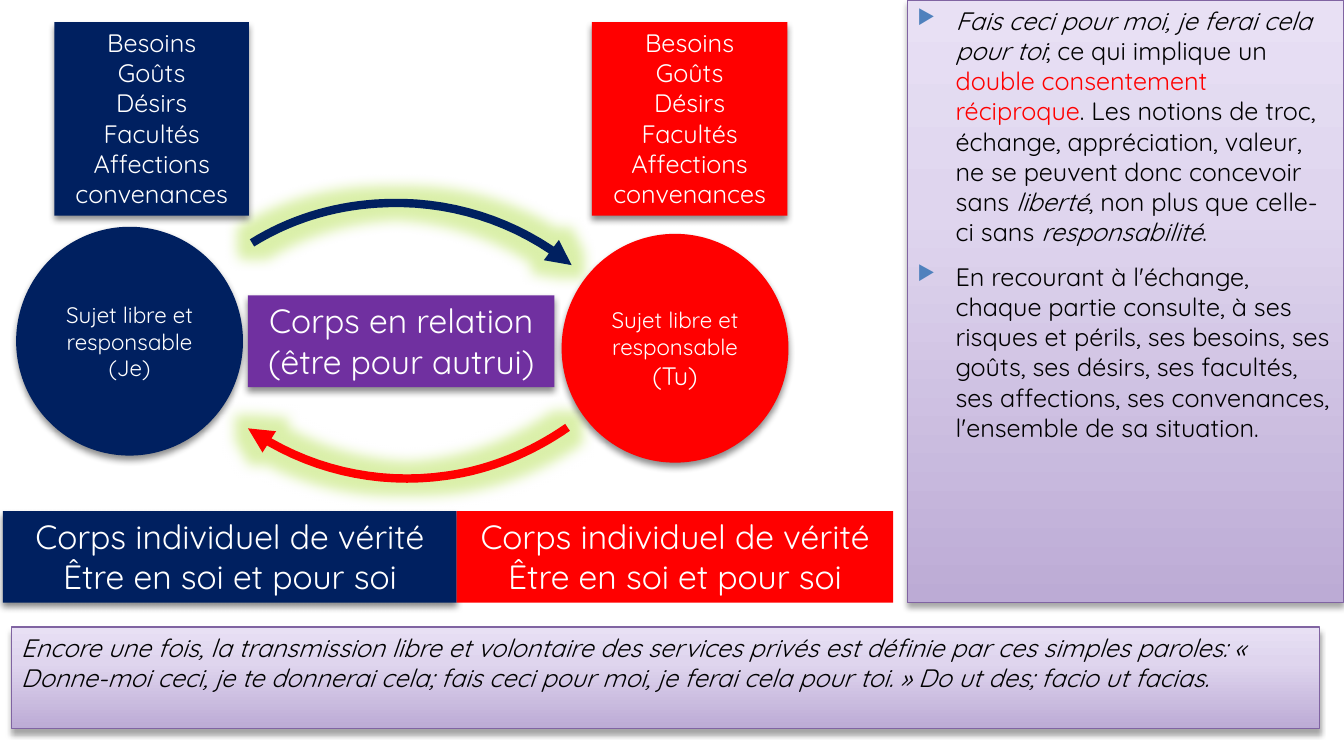
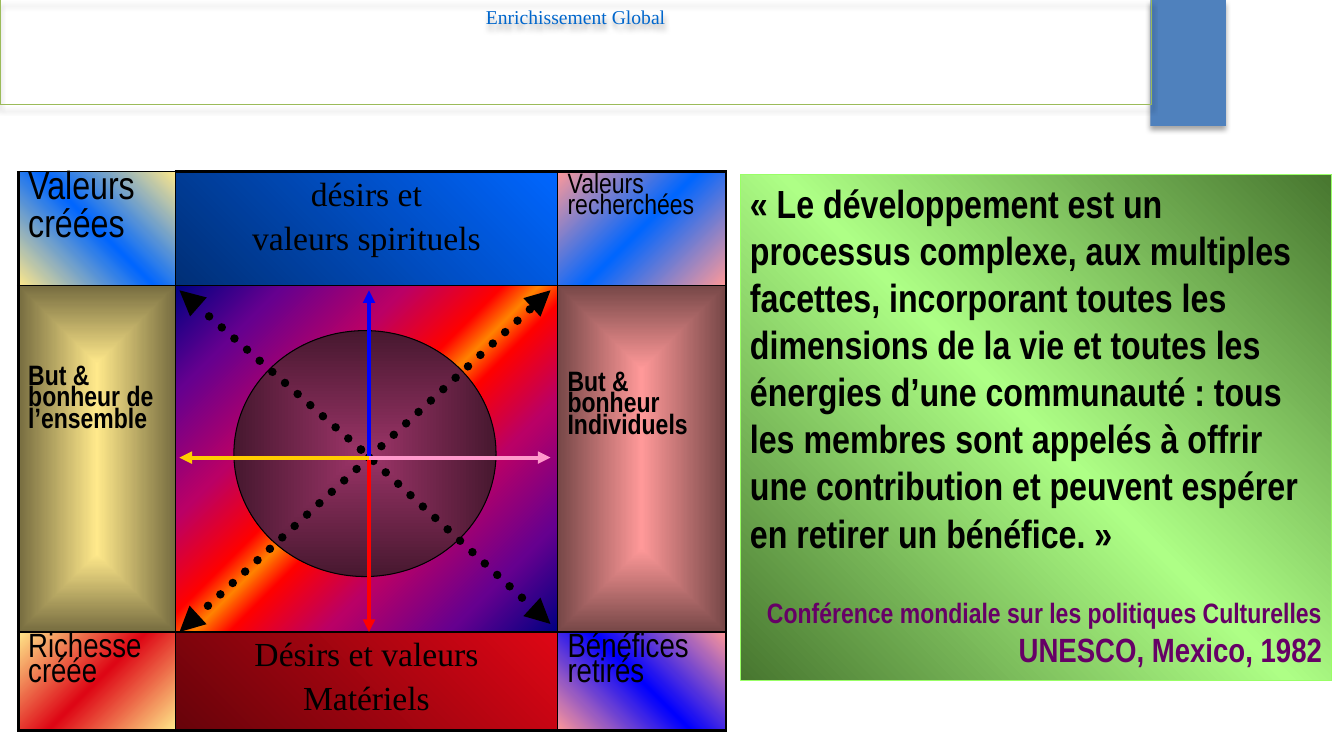
from lxml import etree
from pptx import Presentation
from pptx.dml.color import RGBColor
from pptx.enum.dml import MSO_LINE
from pptx.enum.shapes import MSO_CONNECTOR, MSO_SHAPE
from pptx.enum.text import MSO_ANCHOR, PP_ALIGN
from pptx.oxml.ns import qn
from pptx.util import Inches, Pt

RECT, OVAL = MSO_SHAPE.RECTANGLE, MSO_SHAPE.OVAL
LEFT, MID, RIGHT = PP_ALIGN.LEFT, PP_ALIGN.CENTER, PP_ALIGN.RIGHT
TOP, CENTER = MSO_ANCHOR.TOP, MSO_ANCHOR.MIDDLE
DOTS = MSO_LINE.ROUND_DOT
STRAIGHT = MSO_CONNECTOR.STRAIGHT

# Shared style
NAVY, RED, VIOLET, BLUE = "002060", "FF0000", "7030A0", "4F81BD"
BLACK, WHITE, PLUM = "000000", "FFFFFF", "660066"
SANS, NARROW, SERIF = "Quicksand", "Arial Narrow", "Times New Roman"
SOFT, DEEP = (35, 4, 3), (45, 5, 3)  # shadow: opacity %, blur pt, offset pt
LILAC = ([(0, "BCABD5"), (65, "DFD5EE"), (100, "E8E0F4")], 270)

# Slide 1 content
NEEDS = ["Besoins", "Goûts", "Désirs", "Facultés", "Affections", "convenances"]
SELF = ["Corps individuel de vérité", "Être en soi et pour soi"]
BOND = ["Corps en relation", "(être pour autrui)"]
FREE = "Sujet libre et responsable"
BLOCKS = [  # shape, place, fill, lines, size, shadow
    (OVAL, (0.16, 2.25, 2.25, 2.27), NAVY, [FREE, "(Je)"], 16, DEEP),
    (OVAL, (5.57, 2.32, 2.25, 2.27), RED, [FREE, "(Tu)"], 16, DEEP),
    (RECT, (0.03, 5.07, 4.5, 0.91), NAVY, SELF, 24, DEEP),
    (RECT, (4.53, 5.07, 4.33, 0.91), RED, SELF, 24, None),
    (RECT, (0.54, 0.22, 1.93, 1.92), NAVY, NEEDS, 18, DEEP),
    (RECT, (5.87, 0.22, 1.94, 1.92), RED, NEEDS, 18, DEEP),
    (RECT, (2.46, 2.93, 3.04, 0.91), VIOLET, BOND, 24, DEEP),
]
ARCS = [  # colour, start, then two Bézier pieces
    (NAVY, (2.5, 2.41), [((2.87, 2.18), (3.29, 2.05), (3.73, 2.02)),
                         ((4.44, 1.97), (5.13, 2.19), (5.67, 2.63))]),
    (RED, (5.63, 4.24), [((5.27, 4.49), (4.86, 4.66), (4.43, 4.72)),
                         ((3.73, 4.82), (3.03, 4.65), (2.46, 4.25))]),
]
POINTS = [  # runs: text, italic, colour
    [("Fais ceci pour moi, je ferai cela pour toi", True, BLACK),
     ("; ce qui implique un ", False, BLACK),
     ("double consentement réciproque", False, RED),
     (". Les notions de troc, échange, appréciation, valeur, ne se peuvent "
      "donc concevoir sans ", False, BLACK),
     ("liberté", True, BLACK),
     (", non plus que celle-ci sans ", False, BLACK),
     ("responsabilité", True, BLACK),
     (".", False, BLACK)],
    "En recourant à l'échange, chaque partie consulte, à ses risques et "
    "périls, ses besoins, ses goûts, ses désirs, ses facultés, ses "
    "affections, ses convenances, l'ensemble de sa situation.",
]
MAXIM = ("Encore une fois, la transmission libre et volontaire des services "
         "privés est définie par ces simples paroles: « Donne-moi ceci, je te "
         "donnerai cela; fais ceci pour moi, je ferai cela pour toi. » Do ut "
         "des; facio ut facias.")

# Slide 2 content
TITLE = "Enrichissement Global"
GOLD, PINK, SKY, CRIMSON = "FFE98B", "FF9999", "0066FF", "DE0615"
GLOW = [(0, "000082"), (15, "66008F"), (32, "BA0066"), (45, "FF0000"),
        (50, "FF8200"), (55, "FF0000"), (68, "BA0066"), (85, "66008F"),
        (100, "000082")]


def band(edge, core):
    return [(0, edge), (50, core), (100, edge)]


COLS, ROWS = [1.56, 3.79, 1.67], [1.13, 3.44, 0.98]
CELLS = [  # lines, size, top margin, gradient stops, angle (None: from centre)
    [(["Valeurs", "créées"], 28, 0.05, band(GOLD, SKY), 315),
     (["désirs et", "valeurs spirituels"], 24, 0.05,
      [(0, "002F76"), (100, SKY)], 315),
     (["Valeurs recherchées"], 20, 0.05, band(PINK, SKY), 45)],
    [(["But & bonheur de l’ensemble"], 20, 0.83,
      [(0, GOLD), (100, "766C40")], None),
     ([], 20, 0.05, GLOW, 45),
     (["But & bonheur Individuels"], 20, 0.89,
      [(0, PINK), (100, "764747")], None)],
    [(["Richesse créée"], 24, 0.05, band(GOLD, CRIMSON), 45),
     (["Désirs et valeurs", "Matériels"], 24, 0.05,
      [(0, "67030A"), (100, CRIMSON)], 315),
     (["Bénéfices retirés"], 24, 0.05, band(PINK, "0000FF"), 315)],
]
HUB, NEAR = (3.66, 4.54), (3.58, 4.46)
ARROWS = [  # start, end, colour, width, dotted
    (HUB, (5.46, 2.88), BLACK, 6, True),
    (HUB, (1.78, 6.27), BLACK, 6, True),
    (NEAR, (5.46, 6.19), BLACK, 6, True),
    (NEAR, (1.78, 2.88), BLACK, 6, True),
    (HUB, (3.66, 2.88), "0000FF", 3, False),
    (HUB, (3.66, 6.27), RED, 3, False),
    (HUB, (1.78, 4.54), "FFCC00", 3, False),
    (HUB, (5.46, 4.54), "FF99CC", 3, False),
]
QUOTE = ("« Le développement est un processus complexe, aux multiples "
         "facettes, incorporant toutes les dimensions de la vie et toutes les "
         "énergies d’une communauté : tous les membres sont appelés à offrir "
         "une contribution et peuvent espérer en retirer un bénéfice. »")
SOURCE = ["Conférence mondiale sur les politiques Culturelles",
          "UNESCO, Mexico, 1982"]


def rgb(code):
    return RGBColor.from_string(code)


def sub(node, tag, **attrs):
    child = etree.SubElement(node, qn("a:" + tag))
    for key, val in attrs.items():
        child.set(key, str(val))
    return child


def tint(node, code, alpha=100):
    clr = sub(node, "srgbClr", val=code)
    if alpha < 100:
        sub(clr, "alpha", val=alpha * 1000)


def shade(fill, node, stops, angle):
    """Gradient along an angle, or out from the centre if angle is None."""
    fill.gradient()
    grad = node.find(".//" + qn("a:gradFill"))
    grad.clear()
    stack = sub(grad, "gsLst")
    for pos, code in stops:
        tint(sub(stack, "gs", pos=pos * 1000), code)
    if angle is None:
        way = sub(grad, "path", path="shape")
        sub(way, "fillToRect", l=50000, t=50000, r=50000, b=50000)
    else:
        sub(grad, "lin", ang=angle * 60000, scaled=0)


def stroke(line, code, width):
    line.color.rgb = rgb(code)
    line.width = Pt(width)


def effects(shape):
    shape.shadow.inherit = False
    return shape.element.spPr.find(qn("a:effectLst"))


def add(slide, kind, at, fill=None, edge=None, shadow=None):
    shape = slide.shapes.add_shape(kind, *map(Inches, at))
    if fill is None:
        shape.fill.background()
    elif isinstance(fill, str):
        shape.fill.solid()
        shape.fill.fore_color.rgb = rgb(fill)
    else:
        shade(shape.fill, shape.element.spPr, *fill)
    if edge:
        stroke(shape.line, edge, 0.75)
    else:
        shape.line.fill.background()
    fx = effects(shape)
    if shadow:
        alpha, blur, dist = shadow
        tint(sub(fx, "outerShdw", blurRad=Pt(blur), dist=Pt(dist),
                 dir=5400000, rotWithShape=0), BLACK, alpha)
    return shape


def write(frame, lines, size, face, color=BLACK, align=LEFT, anchor=TOP,
          bold=False, italic=False, gap=0, lead=None, bullet=False):
    frame.word_wrap = True
    frame.vertical_anchor = anchor
    for i, line in enumerate(lines):
        para = frame.add_paragraph() if i else frame.paragraphs[0]
        if bullet:
            ppr = para._p.get_or_add_pPr()
            ppr.set("marL", str(Inches(0.38)))
            ppr.set("indent", str(Inches(-0.38)))
            tint(sub(ppr, "buClr"), BLUE)
            sub(ppr, "buSzPct", val=80000)
            sub(ppr, "buChar", char="▶")
        para.alignment = align
        if i and gap:
            para.space_before = Pt(gap)
        if lead:
            para.line_spacing = lead
        font = para.font
        font.size, font.name, font.bold = Pt(size), face, bold
        font.color.rgb = rgb(color)
        if isinstance(line, str):
            font.italic = italic
            para.add_run().text = line
            continue
        for words, slant, code in line:
            run = para.add_run()
            run.text = words
            run.font.italic = slant
            run.font.color.rgb = rgb(code)


def head(line):
    sub(line, "tailEnd", type="triangle")


def bezier(start, parts, steps=16):
    for one, two, end in parts:
        for n in range(1, steps + 1):
            t = n / steps
            u = 1 - t
            yield tuple(Inches(u**3 * a + 3*u*u*t * b + 3*u*t*t * c + t**3 * d)
                        for a, b, c, d in zip(start, one, two, end))
        start = end


def arc(slide, code, start, parts):
    pen = slide.shapes.build_freeform(*map(Inches, start))
    pen.add_line_segments(list(bezier(start, parts)), close=False)
    shape = pen.convert_to_shape()
    shape.fill.background()
    stroke(shape.line, code, 6)
    head(shape.element.spPr.find(qn("a:ln")))
    tint(sub(effects(shape), "glow", rad=Pt(18)), "A5DA2B", 40)


def arrow(slide, start, end, code, width, dotted):
    link = slide.shapes.add_connector(STRAIGHT, *map(Inches, start + end))
    stroke(link.line, code, width)
    spr = link.element.spPr
    line = spr.find(qn("a:ln"))
    if dotted:
        link.line.dash_style = DOTS
        line.set("cap", "rnd")
    head(line)
    sub(spr, "effectLst")


def grid(slide):
    at = (0.18, 1.7, sum(COLS), sum(ROWS))
    table = slide.shapes.add_table(3, 3, *map(Inches, at)).table
    table.first_row = table.horz_banding = False
    for col, wide in zip(table.columns, COLS):
        col.width = Inches(wide)
    for row, high in zip(table.rows, ROWS):
        row.height = Inches(high)
    for r, row in enumerate(CELLS):
        for c, (lines, size, top, stops, angle) in enumerate(row):
            cell = table.cell(r, c)
            cell.margin_top = Inches(top)
            shade(cell.fill, cell._tc, stops, angle)
            mid = c == 1
            write(cell.text_frame, lines, size, SERIF if mid else NARROW,
                  align=MID if mid else LEFT, bold=r == 1, gap=size / 5,
                  lead=None if mid else 0.8)
            # Heavy outer frame, thin inner lines
            heavy = {"L": c == 0, "R": c == 2, "T": r == 0 and c > 0,
                     "B": r == 2}
            props = cell._tc.get_or_add_tcPr()
            for n, (side, bold) in enumerate(heavy.items()):
                line = sub(props, "ln" + side, w=Pt(2.25 if bold else 1))
                tint(sub(line, "solidFill"), BLACK)
                props.insert(n, line)


def exchange(slide):
    panel = add(slide, RECT, (9, 0, 4.33, 5.98), LILAC, "8064A2", SOFT)
    write(panel.text_frame, POINTS, 18, SANS, gap=10, bullet=True)
    for code, start, parts in ARCS:
        arc(slide, code, start, parts)
    for kind, at, fill, lines, size, shadow in BLOCKS:
        block = add(slide, kind, at, fill, shadow=shadow)
        write(block.text_frame, lines, size, SANS, WHITE, MID,
              CENTER if kind == OVAL else TOP)
        if lines[-1] == "(Tu)":
            block.text_frame.paragraphs[-1].font.size = Pt(18)
    foot = add(slide, RECT, (0.11, 6.22, 12.98, 1.01), LILAC, "8064A2", SOFT)
    write(foot.text_frame, [MAXIM], 18, SANS, italic=True)


def growth(slide):
    grid(slide)
    add(slide, OVAL, (2.32, 3.28, 2.6, 2.44),
        ([(0, "993366"), (100, "47182F")], None), BLACK)
    for item in ARROWS:
        arrow(slide, *item)
    title = add(slide, RECT, (0, 0, 11.42, 1.04), None, "9BBB59", SOFT)
    write(title.text_frame, [TITLE], 14, SERIF, "0066CC", MID)
    quote = add(slide, RECT, (7.34, 1.73, 5.87, 5.02),
                (band("47762F", "AEFF86"), 315), "99FF66")
    write(quote.text_frame, [QUOTE] + SOURCE, 28, NARROW, bold=True)
    for para, size in zip(quote.text_frame.paragraphs[1:], (20, 24)):
        para.alignment = RIGHT
        para.font.size = Pt(size)
        para.font.color.rgb = rgb(PLUM)
    quote.text_frame.paragraphs[1].space_before = Pt(28)


def main():
    prs = Presentation()
    prs.slide_width, prs.slide_height = Inches(13.33), Inches(7.5)
    blank = prs.slide_layouts[6]
    first, second = (prs.slides.add_slide(blank) for _ in range(2))
    # Blue tab, shared through the layout
    tab = add(first, RECT, (11.41, 0, 0.75, 1.25), BLUE, shadow=SOFT)
    blank.shapes.element.append(tab.element)
    exchange(first)
    growth(second)
    prs.save("out.pptx")


if __name__ == "__main__":
    main()
